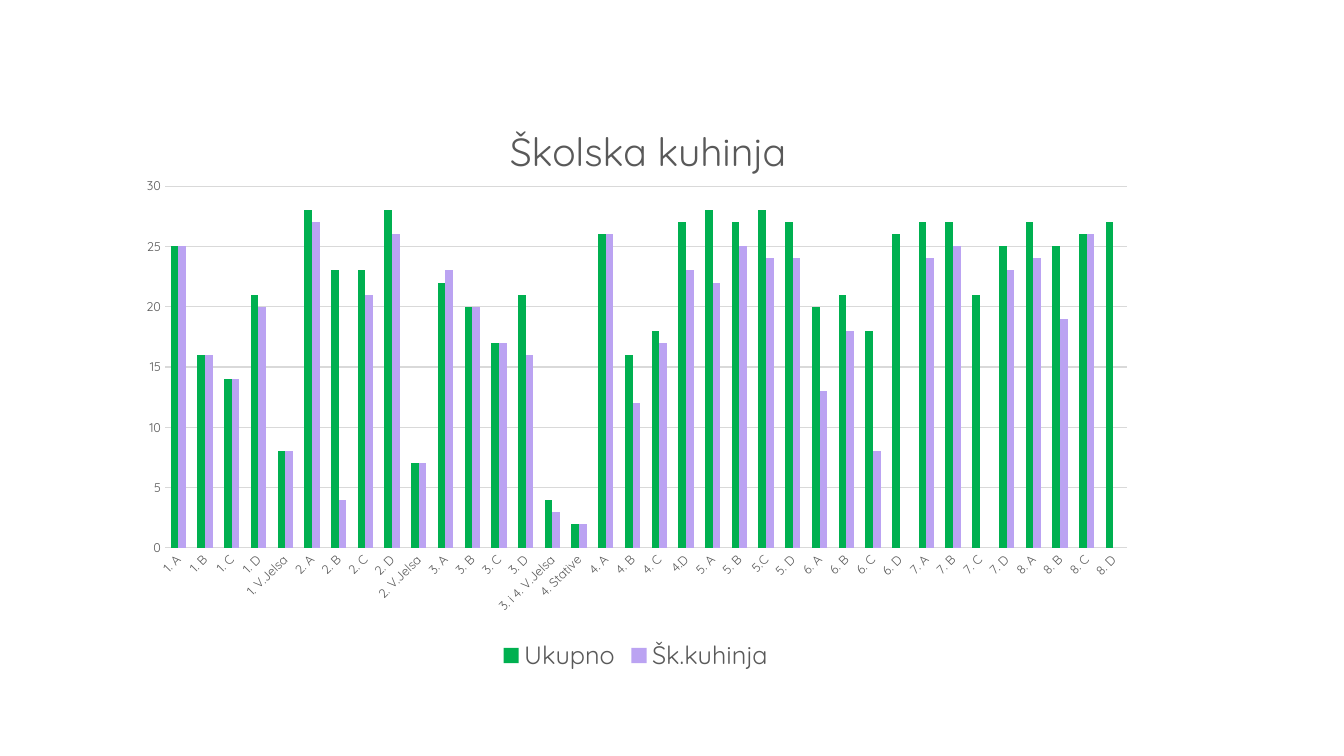
import pptx
import pptx.chart.data
import pptx.dml.color
import pptx.enum.chart
import pptx.oxml
import pptx.oxml.ns
import pptx.util

Inches = pptx.util.Inches
RGBColor = pptx.dml.color.RGBColor

# Content: class, all pupils, pupils using the school kitchen
TITLE = "Školska kuhinja"
CLASSES = [
    ("1. A", 25, 25), ("1. B", 16, 16), ("1. C", 14, 14), ("1. D", 21, 20),
    ("1. V.Jelsa", 8, 8),
    ("2. A", 28, 27), ("2. B", 23, 4), ("2. C", 23, 21), ("2. D", 28, 26),
    ("2. V.Jelsa", 7, 7),
    ("3. A", 22, 23), ("3. B", 20, 20), ("3. C", 17, 17), ("3. D", 21, 16),
    ("3. i 4. V.Jelsa", 4, 3), ("4. Stative", 2, 2),
    ("4. A", 26, 26), ("4. B", 16, 12), ("4. C", 18, 17), ("4.D", 27, 23),
    ("5. A", 28, 22), ("5. B", 27, 25), ("5.C", 28, 24), ("5. D", 27, 24),
    ("6. A", 20, 13), ("6. B", 21, 18), ("6. C", 18, 8), ("6. D", 26, None),
    ("7. A", 27, 24), ("7. B", 27, 25), ("7. C", 21, None), ("7. D", 25, 23),
    ("8. A", 27, 24), ("8. B", 25, 19), ("8. C", 26, 26), ("8. D", 27, None),
]
GREEN = RGBColor(0x00, 0xB0, 0x50)
LILAC = RGBColor(0xBB, 0xA3, 0xF2)
GRAY = RGBColor(0x59, 0x59, 0x59)
GRID_GRAY = RGBColor(0xD9, 0xD9, 0xD9)
BLACK = RGBColor(0x00, 0x00, 0x00)
SERIES = [("Ukupno", GREEN), ("Šk.kuhinja", LILAC)]
FONT_NAME = "Quicksand"


def style_font(font, size, color=GRAY):
    font.name = FONT_NAME
    font.size = pptx.util.Pt(size)
    font.bold = False
    font.color.rgb = color


def write_text(text_frame, text, size=18, color=GRAY):
    text_frame.text = text
    style_font(text_frame.paragraphs[0].runs[0].font, size, color)


def place(element, position, **settings):
    """Set a manual layout in fractions of the chart."""
    for old_layout in element.findall(pptx.oxml.ns.qn("c:layout")):
        element.remove(old_layout)
    values = "".join(f'<c:{name} val="{value}"/>' for name, value in settings.items())
    element.insert(position, pptx.oxml.parse_xml(
        f'<c:layout {pptx.oxml.ns.nsdecls("c")}>'
        f"<c:manualLayout>{values}</c:manualLayout></c:layout>"))


def main():
    presentation = pptx.Presentation()
    presentation.slide_width = Inches(13.33)
    presentation.slide_height = Inches(7.5)
    slide = presentation.slides.add_slide(presentation.slide_layouts[6])

    # Chart data
    data = pptx.chart.data.CategoryChartData()
    names, *columns = zip(*CLASSES)
    data.categories = names
    for (series_name, _), values in zip(SERIES, columns):
        data.add_series(series_name, values)
    chart = slide.shapes.add_chart(
        pptx.enum.chart.XL_CHART_TYPE.COLUMN_CLUSTERED,
        Inches(1.23), Inches(0.92), Inches(10.15), Inches(5.79), data).chart
    style_font(chart.font, 10, BLACK)

    # Title
    chart.has_title = True
    write_text(chart.chart_title.text_frame, TITLE, size=28)
    chart.chart_title.include_in_layout = False
    place(chart.chart_title._element, 1, xMode="edge", yMode="edge", x=0.37, y=0.04)

    # Columns
    plot = chart.plots[0]
    plot.gap_width = 150
    plot.overlap = 0
    plot.vary_by_categories = False
    for series, (_, color) in zip(plot.series, SERIES):
        series.format.fill.solid()
        series.format.fill.fore_color.rgb = color
    place(chart._chartSpace.chart.plotArea, 0, layoutTarget="inner",
          xMode="edge", yMode="edge", x=0.04, y=0.16, w=0.94, h=0.62)

    # Axes and gridlines
    for axis in (chart.category_axis, chart.value_axis):
        axis.major_tick_mark = pptx.enum.chart.XL_TICK_MARK.NONE
        axis.minor_tick_mark = pptx.enum.chart.XL_TICK_MARK.NONE
        axis.format.line.fill.background()
        style_font(axis.tick_labels.font, 9)
    label_body = chart.category_axis._element.find(".//" + pptx.oxml.ns.qn("a:bodyPr"))
    label_body.set("rot", "-2700000")
    chart.value_axis.minimum_scale = 0
    chart.value_axis.maximum_scale = 30
    chart.value_axis.major_unit = 5
    grid_line = chart.value_axis.major_gridlines.format.line
    grid_line.color.rgb = GRID_GRAY
    grid_line.width = pptx.util.Pt(0.75)

    # Legend
    chart.has_legend = True
    chart.legend.position = pptx.enum.chart.XL_LEGEND_POSITION.BOTTOM
    chart.legend.include_in_layout = False
    style_font(chart.legend.font, 18)

    presentation.save("out.pptx")


if __name__ == "__main__":
    main()
